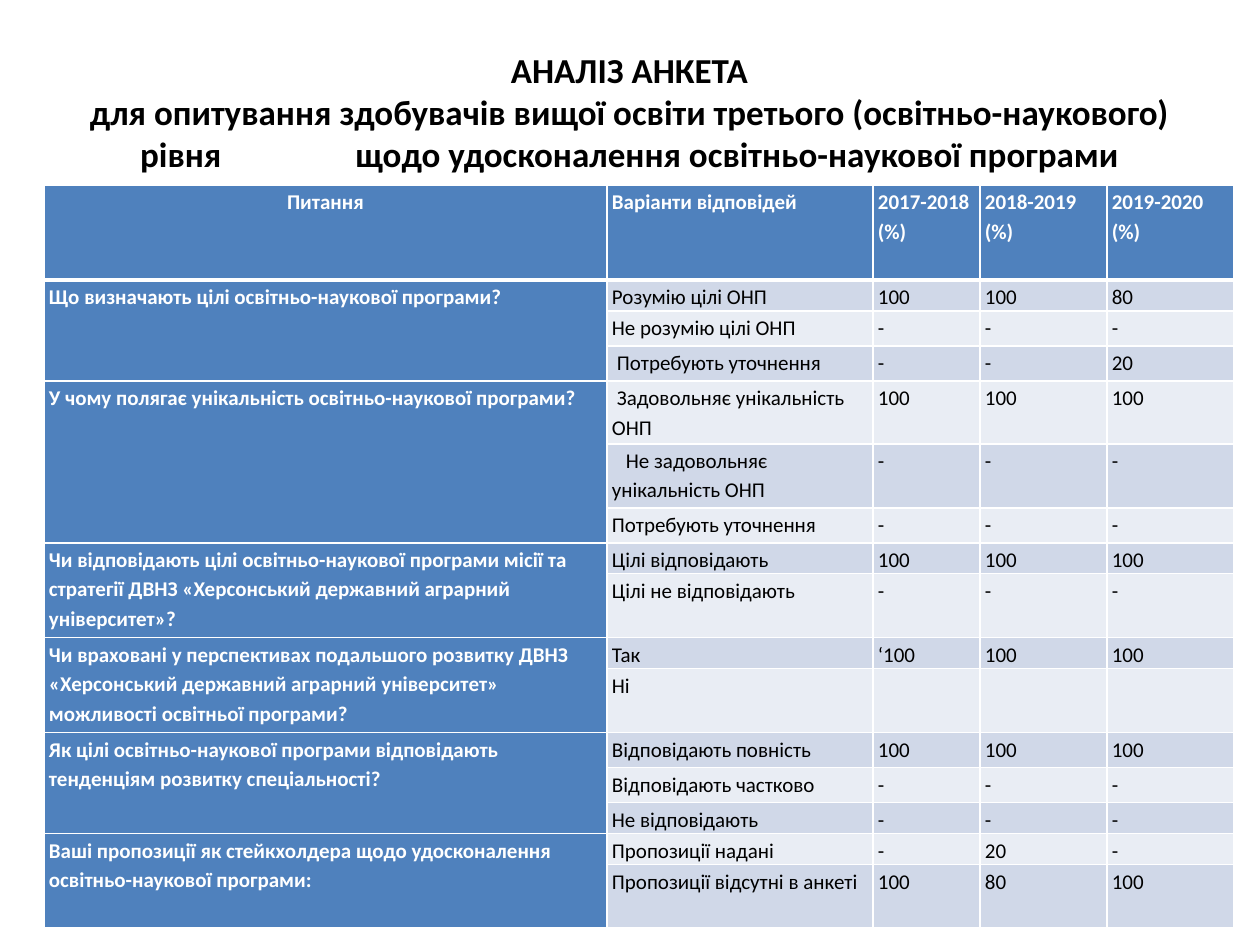
from lxml import etree
from pptx import Presentation, util as u
from pptx.dml.color import RGBColor
from pptx.enum import text
from pptx.oxml.ns import qn

PX = 914400 // 126
FONT = "Calibri"
BLACK = RGBColor(0x00, 0x00, 0x00)
WHITE = RGBColor(0xFF, 0xFF, 0xFF)
BLUE = RGBColor(0x4F, 0x81, 0xBD)
BANDS = RGBColor(0xE9, 0xED, 0xF4), RGBColor(0xD0, 0xD8, 0xE8)

# Title: the last two pieces stand apart on one line
HEADING = "АНАЛІЗ АНКЕТА"
SUBHEADING = ("для опитування здобувачів вищої освіти третього (освітньо-наукового) рівня",
              "щодо удосконалення освітньо-наукової програми")
TITLE_BOX = (63, 38, 1133, 147)
TITLE_GAP = 72  # points added to the space between the two pieces

HEADER = ["Питання", "Варіанти відповідей",
          "2017-2018\n(%)", "2018-2019\n(%)", "2019-2020\n(%)"]
# Question, then its answers: (answer, values by year, row height)
QUESTIONS = [
    ("Що визначають цілі освітньо-наукової програми?", [
        ("Розумію цілі ОНП", ("100", "100", "80"), 31),
        ("Не розумію цілі ОНП", ("-", "-", "-"), 35),
        ("Потребують уточнення", ("-", "-", "20"), 35)]),
    ("У чому полягає унікальність освітньо-наукової програми?", [
        ("Задовольняє унікальність ОНП", ("100", "100", "100"), 63),
        ("Не задовольняє унікальність ОНП", ("-", "-", "-"), 64),
        ("Потребують уточнення", ("-", "-", "-"), 35)]),
    ("Чи відповідають цілі освітньо-наукової програми місії та стратегії ДВНЗ "
     "«Херсонський державний аграрний університет»?", [
        ("Цілі відповідають", ("100", "100", "100"), 31),
        ("Цілі не відповідають", ("-", "-", "-"), 64)]),
    ("Чи враховані у перспективах подальшого розвитку ДВНЗ «Херсонський державний "
     "аграрний університет» можливості освітньої програми?", [
        ("Так", ("‘100", "100", "100"), 31),
        ("Ні", ("", "", ""), 64)]),
    ("Як цілі освітньо-наукової програми відповідають тенденціям розвитку спеціальності?", [
        ("Відповідають повність", ("100", "100", "100"), 35),
        ("Відповідають частково", ("-", "-", "-"), 35),
        ("Не відповідають", ("-", "-", "-"), 31)]),
    ("Ваші пропозиції як стейкхолдера щодо удосконалення освітньо-наукової програми:", [
        ("Пропозиції надані", ("-", "20", "-"), 31),
        ("Пропозиції відсутні в анкеті", ("100", "80", "100"), 63)]),
]
FIRST_LINE_INDENTS = {3: 5, 4: 5, 5: 14}  # table row: px
COLUMNS = [563, 266, 107, 127, 127]
HEADER_HEIGHT = 95
TABLE_LEFT, TABLE_TOP = 44, 185


def format_runs(paragraph, size, color, bold):
    for run in paragraph.runs:
        run.font.name, run.font.size, run.font.bold = FONT, u.Pt(size), bold
        run.font.color.rgb = color


def set_borders(cell, row):
    properties = cell._tc.get_or_add_tcPr()
    widths = {"lnL": 1, "lnR": 1,
              "lnT": 3 if row == 1 else 1, "lnB": 3 if row == 0 else 1}
    for side, width in widths.items():
        line = etree.SubElement(properties, qn("a:" + side), w=str(u.Pt(width)))
        fill = etree.SubElement(line, qn("a:solidFill"))
        etree.SubElement(fill, qn("a:srgbClr"), val=str(WHITE))


def style_cell(cell, row, column):
    cell.margin_left = cell.margin_right = 5 * PX
    cell.margin_top, cell.margin_bottom = PX, 0
    set_borders(cell, row)
    strong = row == 0 or column == 0
    cell.fill.solid()
    cell.fill.fore_color.rgb = BLUE if strong else BANDS[row % 2]
    for paragraph in cell.text_frame.paragraphs:
        paragraph.line_spacing = 1.15
        format_runs(paragraph, 12, WHITE if strong else BLACK, strong)


def add_title(slide):
    box = slide.shapes.add_textbox(*(value * PX for value in TITLE_BOX))
    frame = box.text_frame
    frame.word_wrap = True
    frame.vertical_anchor = text.MSO_ANCHOR.MIDDLE
    paragraph = frame.paragraphs[0]
    paragraph.alignment = text.PP_ALIGN.CENTER
    paragraph.text = HEADING + "\v"
    first, gap, second = (paragraph.add_run() for _ in range(3))
    first.text, second.text = SUBHEADING
    gap.text = " "
    format_runs(paragraph, 20, BLACK, True)
    gap.font._element.set("spc", str(TITLE_GAP * 100))


def add_survey_table(slide):
    answers = [answer for _, group in QUESTIONS for answer in group]
    heights = [HEADER_HEIGHT] + [height for _, _, height in answers]
    rows = [HEADER] + [["", answer, *values] for answer, values, _ in answers]
    table = slide.shapes.add_table(
        len(rows), len(COLUMNS), TABLE_LEFT * PX, TABLE_TOP * PX,
        sum(COLUMNS) * PX, sum(heights) * PX).table
    for column, width in zip(table.columns, COLUMNS):
        column.width = width * PX
    for row, height in zip(table.rows, heights):
        row.height = height * PX

    # Each question spans the rows of its answers
    start = 1
    for question, group in QUESTIONS:
        rows[start][0] = question
        table.cell(start, 0).merge(table.cell(start + len(group) - 1, 0))
        start += len(group)

    for r, values in enumerate(rows):
        for c, value in enumerate(values):
            cell = table.cell(r, c)
            cell.text_frame.text = value
            style_cell(cell, r, c)
    table.cell(0, 0).text_frame.paragraphs[0].alignment = text.PP_ALIGN.CENTER
    for row, indent in FIRST_LINE_INDENTS.items():
        paragraph = table.cell(row, 1).text_frame.paragraphs[0]
        paragraph._p.get_or_add_pPr().set("indent", str(indent * PX))


def main():
    presentation = Presentation()
    presentation.slide_width, presentation.slide_height = u.Inches(10), u.Inches(7.5)
    slide = presentation.slides.add_slide(presentation.slide_layouts[6])
    add_title(slide)
    add_survey_table(slide)
    presentation.save("out.pptx")


if __name__ == "__main__":
    main()
